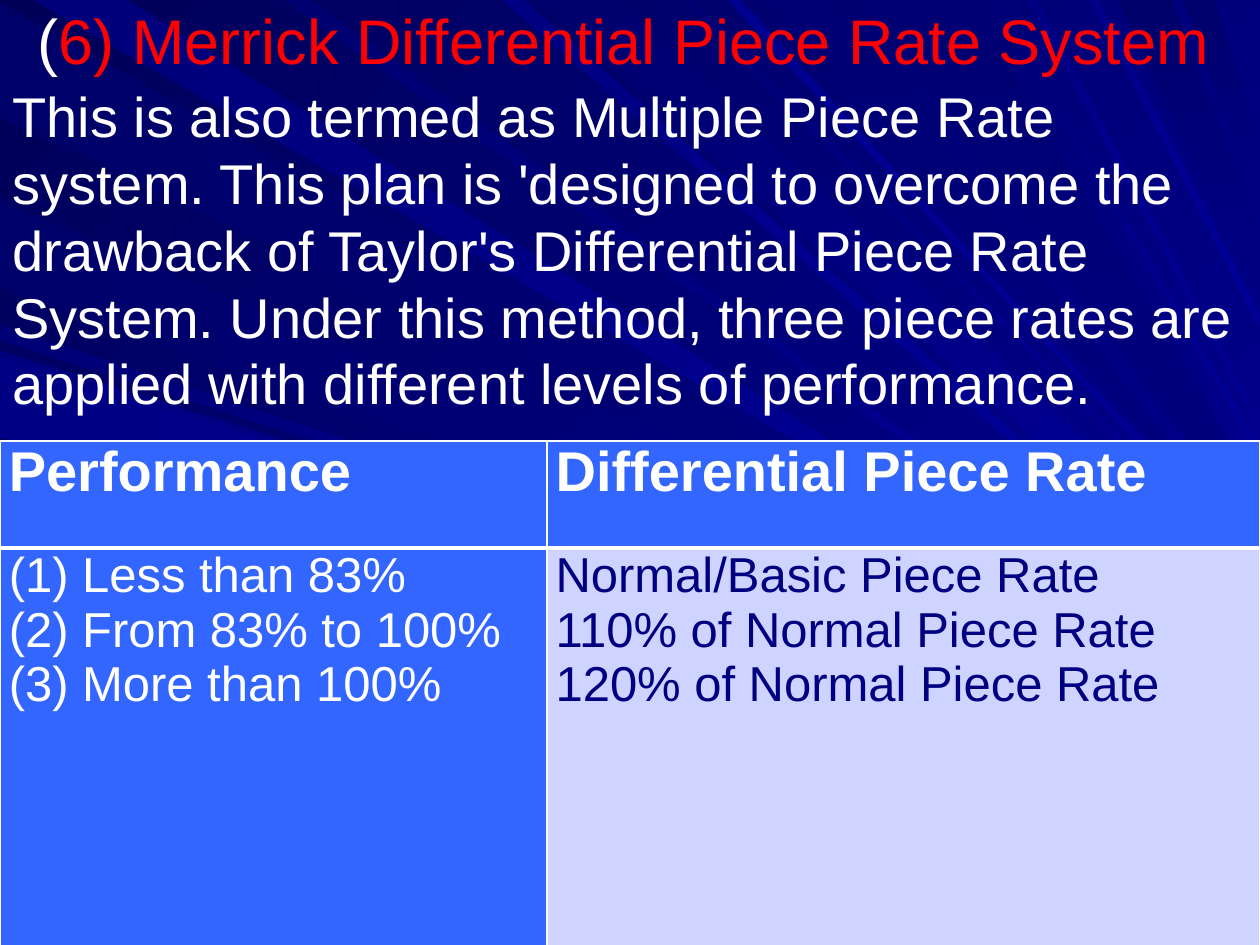
from dataclasses import dataclass
from typing import NamedTuple

import pptx
import pptx.dml.color
import pptx.enum.text
import pptx.oxml
import pptx.oxml.ns
import pptx.util
from pptx.util import Inches

Align = pptx.enum.text.PP_ALIGN
Anchor = pptx.enum.text.MSO_ANCHOR


@dataclass(frozen=True)
class Theme:
    font: str = "Arial"
    white: str = "FFFFFF"
    red: str = "FF0000"
    navy: str = "000080"
    blue: str = "3366FF"
    pale: str = "CED3FF"
    night: str = "000058"
    glow: str = "000099"
    title_size: float = 36
    body_size: float = 32
    cell_size: float = 28
    body_leading: float = 38.2
    thin: float = 1
    thick: float = 3


class Span(NamedTuple):
    text: str
    color: str
    size: float
    bold: bool = False


class Line(NamedTuple):
    spans: list[Span]
    align: Align = Align.LEFT


class Ray(NamedTuple):
    start: str
    end: str
    angle: int
    points: list[tuple[float, float]]


class CellSpec(NamedTuple):
    lines: list[Line]
    fill: str
    top: float
    bottom: float


THEME = Theme()

RAYS = [
    Ray("000069", "000080", 0, [(5.56, 3.17), (0, 0.02), (0, 0.93), (5.29, 3.45), (10, 5.7), (10, 5.69)]),
    Ray("00007B", "000099", 45, [(5.77, 2.98), (1.01, 0), (0.26, 0), (5.63, 3.1), (10, 5.63), (10, 5.62)]),
    Ray("000076", "000099", 45, [(0, 2.7), (8.73, 5.48), (8.73, 5.47), (0, 2.58)]),
    Ray("00006B", "000080", 0, [(0, 2.28), (8.73, 5.39), (8.73, 5.29), (0, 1.59)]),
    Ray("000083", "000099", 45, [(3.98, 0), (9.44, 4.73), (9.47, 4.69), (4.16, 0)]),
    Ray("00006D", "000099", 45, [(4.26, 0), (9.51, 4.65), (9.68, 4.49), (4.92, 0)]),
    Ray("000073", "000099", 45, [(5.4, 0), (9.77, 4.4), (5.52, 0)]),
    Ray("000073", "000080", 90, [(6.06, 0), (9.85, 4.31), (9.87, 4.3), (6.61, 0)]),
    Ray("000080", "000080", 0, [(10, 2.37), (10, 1.83), (9.86, 1.48), (9.73, 1.81)]),
    Ray("00006B", "000080", 90, [(8.87, 0), (9.73, 1.81), (9.86, 1.48), (9.3, 0)]),
    Ray("00006D", "000080", 90, [(9.64, 0), (9.39, 0), (9.89, 1.38), (9.99, 1.13)]),
    Ray("000080", "000080", 0, [(9.89, 1.38), (10, 1.67), (10, 1.14), (9.99, 1.13)]),
    Ray("00007E", "000099", 45, [(0, 3.42), (9.99, 6.02), (9.99, 5.96), (0, 2.78)]),
    Ray("000070", "000099", 45, [(2.25, 0), (9.99, 5.52), (9.99, 5.47), (2.47, 0)]),
    Ray("00008E", "000099", 45, [(5.77, 0), (9.99, 4.54), (9.99, 4.53), (5.88, 0)]),
    Ray("000073", "000080", 90, [(7.7, 0), (6.86, 0), (9.99, 4.28), (9.99, 3.9)]),
    Ray("000078", "000099", 45, [(7.85, 0), (9.99, 3.6), (9.99, 3.54), (7.92, 0)]),
    Ray("000085", "000099", 45, [(8.15, 0), (9.99, 3.36), (9.99, 3.35), (8.24, 0)]),
    Ray("00008A", "000099", 45, [(9.99, 2.49), (8.72, 0), (8.65, 0), (9.99, 2.58)]),
    Ray("000085", "000099", 0, [(0, 2.83), (0, 3.47), (6.33, 5.11), (6.35, 4.98), (6.37, 4.85)]),
]


def rgb(value: str) -> pptx.dml.color.RGBColor:
    return pptx.dml.color.RGBColor.from_string(value)


def paint(fill, start: str, end: str, angle: int = 0) -> None:
    """Fill with a gradient turned clockwise by angle, or plainly if both ends match."""
    if start == end:
        fill.solid()
        fill.fore_color.rgb = rgb(start)
        return
    fill.gradient()
    fill.gradient_angle = -angle % 360
    for stop, position, color in zip(fill.gradient_stops, (0, 1), (start, end)):
        stop.position = position
        stop.color.rgb = rgb(color)


def draw_ray(shapes, ray: Ray) -> None:
    points = [(Inches(x), Inches(y)) for x, y in ray.points]
    builder = shapes.build_freeform(*points[0])
    builder.add_line_segments(points[1:], close=True)
    shape = builder.convert_to_shape()
    shape.shadow.inherit = False
    shape.line.fill.background()
    paint(shape.fill, ray.start, ray.end, ray.angle)


def write(frame, lines: list[Line], leading: float | None = None) -> None:
    for index, line in enumerate(lines):
        para = frame.add_paragraph() if index else frame.paragraphs[0]
        para.alignment = line.align
        if leading:
            para.line_spacing = pptx.util.Pt(leading)
        for part in line.spans:
            span = para.add_run()
            span.text = part.text
            span.font.name = THEME.font
            span.font.size = pptx.util.Pt(part.size)
            span.font.bold = part.bold
            span.font.color.rgb = rgb(part.color)


def add_text(page, place: tuple[float, ...], line: Line, anchor: Anchor,
             leading: float | None = None) -> None:
    box = page.shapes.add_textbox(*map(Inches, place))
    box.text_frame.word_wrap = True
    box.text_frame.vertical_anchor = anchor
    write(box.text_frame, [line], leading)


def set_borders(cell, widths: dict[str, float]) -> None:
    properties = cell._tc.get_or_add_tcPr()
    for index, (side, width) in enumerate(widths.items()):
        properties.insert(index, pptx.oxml.parse_xml(
            f'<a:{side} {pptx.oxml.ns.nsdecls("a")} w="{pptx.util.Pt(width)}">'
            f'<a:solidFill><a:srgbClr val="{THEME.white}"/></a:solidFill></a:{side}>'))


def fill_cell(cell, spec: CellSpec) -> None:
    cell.margin_left = cell.margin_right = Inches(0.07)
    cell.margin_top = cell.margin_bottom = 0
    cell.fill.solid()
    cell.fill.fore_color.rgb = rgb(spec.fill)
    set_borders(cell, {"lnL": THEME.thin, "lnR": THEME.thin, "lnT": spec.top, "lnB": spec.bottom})
    write(cell.text_frame, spec.lines)


def header(text: str) -> CellSpec:
    line = Line([Span(text, THEME.white, THEME.body_size, True)], Align.JUSTIFY)
    return CellSpec([line], THEME.blue, THEME.thin, THEME.thick)


def entries(texts: list[str], color: str, fill: str) -> CellSpec:
    lines = [Line([Span(text, color, THEME.cell_size)]) for text in texts]
    return CellSpec(lines, fill, THEME.thick, THEME.thin)


def add_rate_table(page) -> None:
    rows = [
        [header("Performance"), header("Differential Piece Rate")],
        [entries(["(1) Less than 83%", "(2) From 83% to 100%", "(3) More than 100%"],
                 THEME.white, THEME.blue),
         entries(["Normal/Basic Piece Rate", "110% of Normal Piece Rate",
                  "120% of Normal Piece Rate"], THEME.navy, THEME.pale)],
    ]
    table = page.shapes.add_table(2, 2, 0, Inches(3.5), Inches(10), Inches(4.24)).table
    for column, width in zip(table.columns, (4.34, 5.66)):
        column.width = Inches(width)
    for row, height, specs in zip(table.rows, (0.85, 3.39), rows):
        row.height = Inches(height)
        for cell, spec in zip(row.cells, specs):
            fill_cell(cell, spec)


def main() -> None:
    deck = pptx.Presentation()
    deck.slide_width, deck.slide_height = Inches(10), Inches(7.5)
    page = deck.slides.add_slide(deck.slide_layouts[6])
    paint(page.background.fill, THEME.night, THEME.glow, 45)
    rays = page.shapes.add_group_shape()
    for ray in RAYS:
        draw_ray(rays.shapes, ray)
    title = Line([Span("(", THEME.white, THEME.title_size),
                  Span("6) Merrick Differential Piece Rate System", THEME.red, THEME.title_size)],
                 Align.CENTER)
    add_text(page, (0, -0.23, 9.9, 1.09), title, Anchor.MIDDLE)
    body = Line([Span("This is also termed as Multiple Piece Rate system. This plan is 'designed to "
                      "overcome the drawback of Taylor's Differential Piece Rate System. Under this "
                      "method, three piece rates are applied with different levels of performance.",
                      THEME.white, THEME.body_size)])
    add_text(page, (0, 0.6, 10, 6.9), body, Anchor.TOP, THEME.body_leading)
    add_rate_table(page)
    deck.save("out.pptx")


if __name__ == "__main__":
    main()
